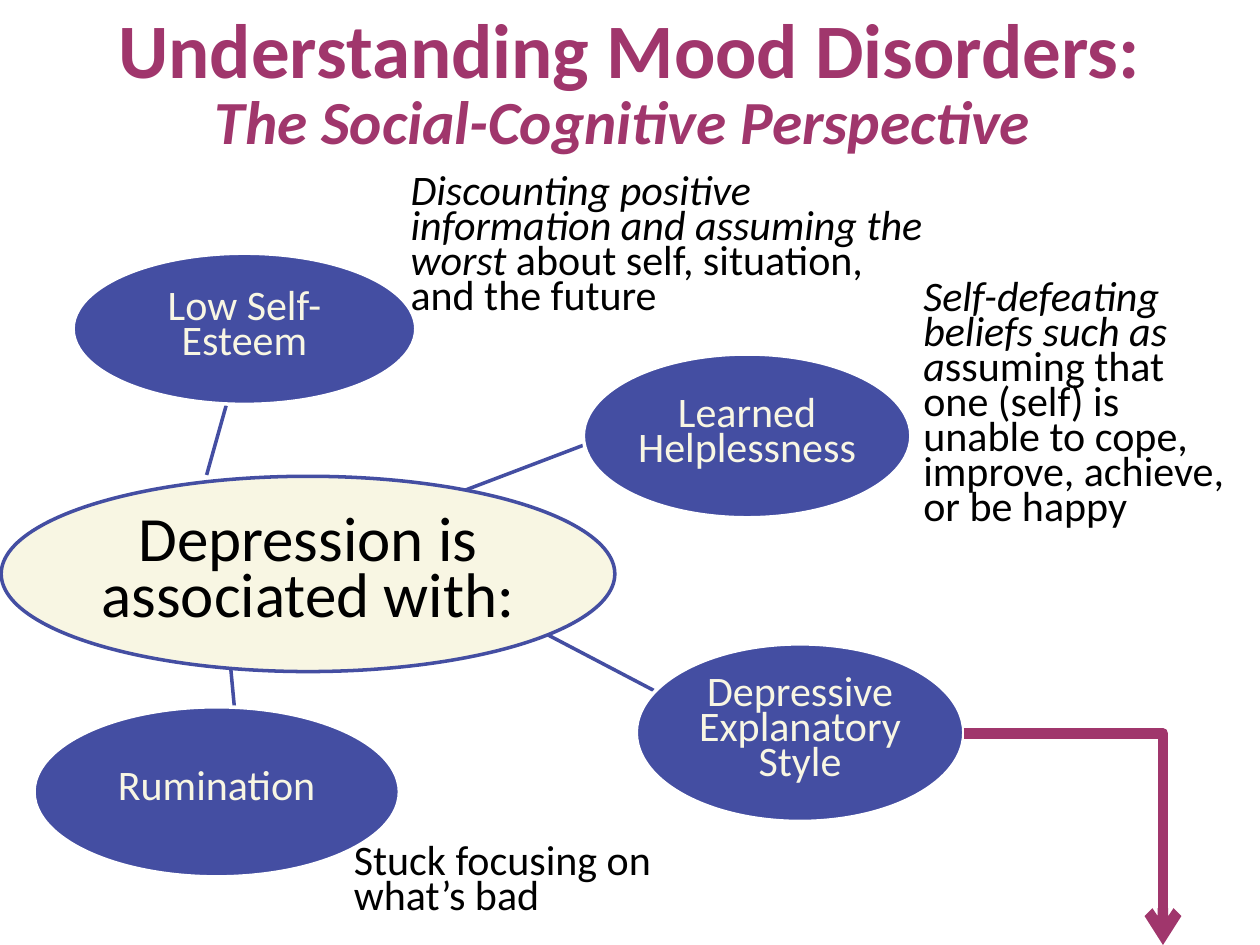
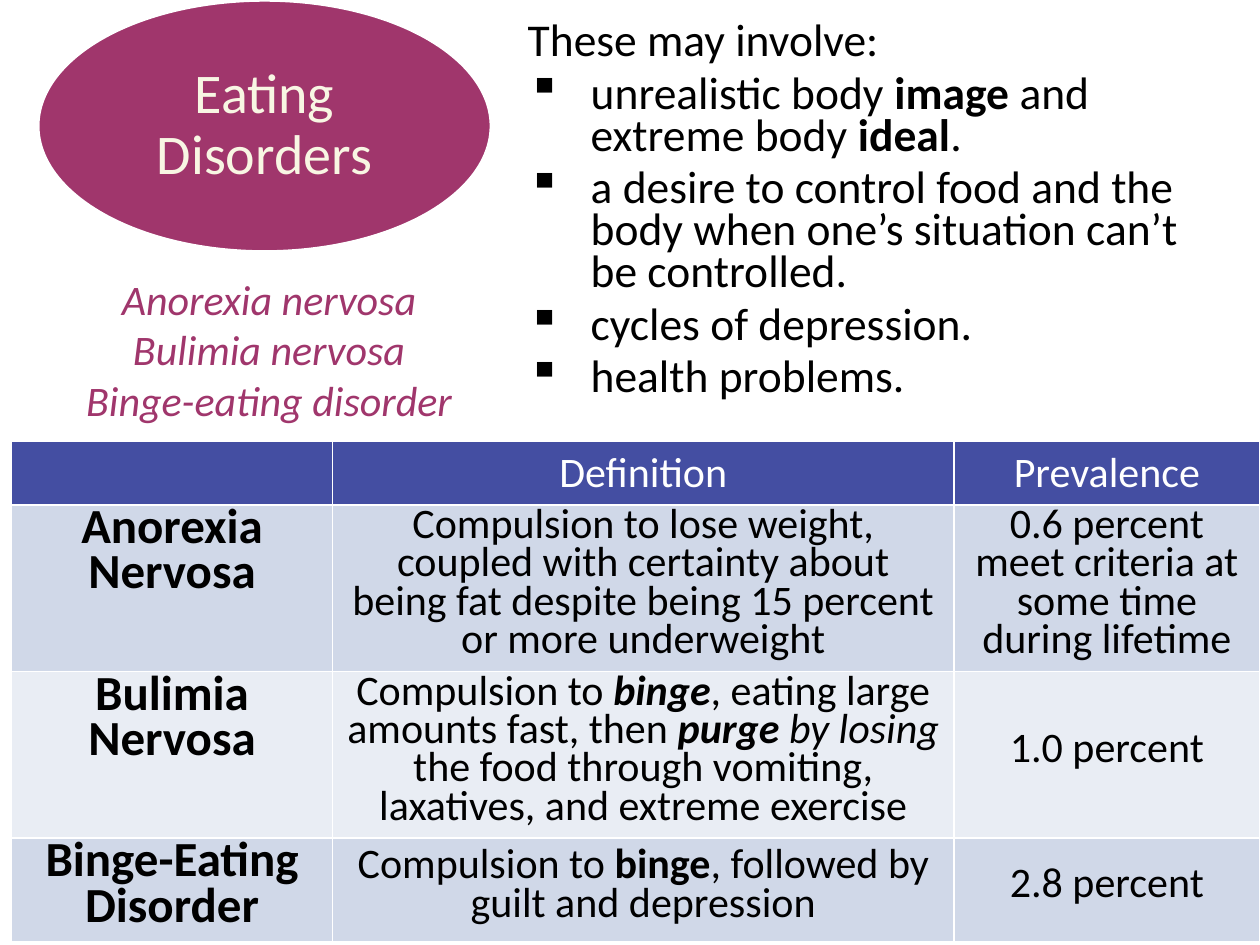
from dataclasses import dataclass
from typing import NamedTuple

from lxml import etree
from pptx import Presentation
from pptx import util as u
from pptx.dml.color import RGBColor
from pptx.enum import shapes, text
from pptx.oxml import ns

Inches, Pt = u.Inches, u.Pt
CENTER, LEFT = text.PP_ALIGN.CENTER, text.PP_ALIGN.LEFT
TOP, MIDDLE = text.MSO_ANCHOR.TOP, text.MSO_ANCHOR.MIDDLE


@dataclass(frozen=True)
class Theme:
    font: str = "Calibri"
    plum: str = "A0366C"
    blue: str = "444EA2"
    cream: str = "F8F6E3"
    white: str = "FFFFFF"
    black: str = "000000"
    bands: tuple = ("D0D8E8", "E9EDF4")
    title: int = 44
    subtitle: int = 35
    hub: int = 36
    topic: int = 32
    row_head: int = 28
    list: int = 26
    body: int = 24


THEME = Theme()


class Span(NamedTuple):
    text: str
    bold: bool = False
    italic: bool = False
    size: int = 0  # 0 means the size of the paragraph


class Area(NamedTuple):
    left: float
    top: float
    width: float
    height: float

    def lengths(self) -> list:
        return [Inches(value) for value in self]


@dataclass(frozen=True)
class Style:
    size: int = THEME.body
    color: str = THEME.black
    align: int = LEFT
    leading: object = None  # points as Pt, or a share of a line
    after: int = 0
    anchor: int = TOP
    inset: tuple = (0.1, 0.05)


@dataclass(frozen=True)
class Factor:
    label: str
    area: Area
    spoke: tuple  # start x, start y, end x, end y


class TableRow(NamedTuple):
    disorder: str
    definition: list
    prevalence: str


# Text styles
TITLE = Style(THEME.title, THEME.plum, CENTER, Pt(36), anchor=MIDDLE)
NOTE = Style(leading=Pt(20))
FACTOR = Style(THEME.body, THEME.cream, CENTER, Pt(20), anchor=MIDDLE, inset=(0, 0))
HUB = Style(THEME.hub, THEME.black, CENTER, Pt(32), anchor=MIDDLE, inset=(0, 0))
TOPIC = Style(THEME.topic, THEME.cream, CENTER, 0.9, anchor=MIDDLE, inset=(0.19, 0.19))
KINDS = Style(THEME.body, THEME.plum, CENTER)
SIGNS = Style(THEME.list, leading=Pt(24), after=6)
HEADER = Style(THEME.body, THEME.white, CENTER)
ROW_HEAD = Style(THEME.row_head, THEME.black, CENTER, Pt(26))
CELL = Style(THEME.body, THEME.black, CENTER, Pt(22), anchor=MIDDLE)

# Content of the mood disorders slide
FACTORS = [
    Factor("Depressive Explanatory Style", Area(5.05, 5.11, 2.6, 1.41), (4.35, 5.04, 5.19, 5.48)),
    Factor("Low Self-Esteem", Area(0.58, 2.01, 2.72, 1.2), (1.64, 3.77, 1.8, 3.2)),
    Factor("Learned Helplessness", Area(4.63, 2.81, 2.6, 1.3), (3.64, 3.91, 4.64, 3.53)),
    Factor("Rumination", Area(0.27, 5.61, 2.9, 1.35), (1.83, 5.29, 1.86, 5.61)),
]
NOTES = [
    (Area(3.16, 1.37, 4.35, 1.24),
     [Span("Discounting positive information and assuming the worst", italic=True),
      Span(" about self, situation, and the future")]),
    (Area(7.23, 2.21, 2.67, 2.06),
     [Span("Self-defeating beliefs such as a", italic=True),
      Span("ssuming that one (self) is unable to cope, improve, achieve, or be happy")]),
    (Area(2.71, 6.69, 3.22, 0.68), [Span("Stuck focusing on what’s bad")]),
]

# Content of the eating disorders slide
SIGN_ITEMS = [
    [Span("unrealistic body "), Span("image ", bold=True), Span("and extreme body "),
     Span("ideal", bold=True), Span(".")],
    [Span("a desire to control food and the body when one’s situation can’t be controlled.")],
    [Span("cycles of depression.")],
    [Span("health problems.")],
]
COLUMNS = (2.55, 4.93, 2.43)
ROW_HEIGHTS = (0.5, 1.32, 1.32, 0.82)
TABLE_ROWS = [
    TableRow("Anorexia Nervosa",
             [Span("Compulsion to lose weight, coupled with certainty about being fat "
                   "despite being 15 percent or more underweight")],
             "0.6 percent meet criteria at some time during lifetime"),
    TableRow("Bulimia Nervosa",
             [Span("Compulsion to "), Span("binge", bold=True, italic=True),
              Span(", eating large amounts fast, then "),
              Span("purge ", bold=True, italic=True), Span("by losing", italic=True),
              Span(" the food through vomiting, laxatives, and extreme exercise")],
             "1.0 percent"),
    TableRow("Binge-Eating Disorder",
             [Span("Compulsion to "), Span("binge", bold=True),
              Span(", followed by guilt and depression")],
             "2.8 percent"),
]


def rgb(color: str) -> RGBColor:
    return RGBColor.from_string(color)


def write(para, spans: list, style: Style) -> None:
    """Fill one paragraph; a newline in a span becomes a line break."""
    para.alignment = style.align
    para.line_spacing = style.leading
    para.space_after = Pt(style.after)
    for span in spans:
        for number, line in enumerate(span.text.split("\n")):
            if number:
                para.add_line_break()
            run = para.add_run()
            run.text = line
            font = run.font
            font.name, font.size = THEME.font, Pt(span.size or style.size)
            font.bold, font.italic = span.bold, span.italic
            font.color.rgb = rgb(style.color)


def set_frame(frame, style: Style) -> None:
    frame.word_wrap = True
    frame.vertical_anchor = style.anchor
    frame.margin_left = frame.margin_right = Inches(style.inset[0])
    frame.margin_top = frame.margin_bottom = Inches(style.inset[1])


def add_text(page, area: Area, spans: list, style: Style):
    frame = page.shapes.add_textbox(*area.lengths()).text_frame
    set_frame(frame, style)
    write(frame.paragraphs[0], spans, style)
    return frame


def add_oval(page, area: Area, label: str, style: Style, fill: str,
             outline: str = THEME.white) -> None:
    oval = page.shapes.add_shape(shapes.MSO_SHAPE.OVAL, *area.lengths())
    oval.shadow.inherit = False
    oval.fill.solid()
    oval.fill.fore_color.rgb = rgb(fill)
    oval.line.color.rgb = rgb(outline)
    oval.line.width = Pt(2)
    set_frame(oval.text_frame, style)
    write(oval.text_frame.paragraphs[0], [Span(label)], style)


def add_line(page, ends: tuple, color: str, width: float,
             kind: int = shapes.MSO_CONNECTOR.STRAIGHT):
    line = page.shapes.add_connector(kind, *[Inches(value) for value in ends])
    line.line.color.rgb = rgb(color)
    line.line.width = Pt(width)
    etree.SubElement(line._element.spPr, ns.qn("a:effectLst"))
    return line


def add_bent_arrow(page, ends: tuple, color: str, width: float) -> None:
    arrow = add_line(page, ends, color, width, shapes.MSO_CONNECTOR.ELBOW)
    arrow._element.spPr.find(ns.qn("a:prstGeom")).set("prst", "bentConnector2")
    etree.SubElement(arrow.line._get_or_add_ln(), ns.qn("a:tailEnd"), type="arrow")


def add_bullet(para, indent: float) -> None:
    props = para._p.get_or_add_pPr()
    props.set("marL", str(Inches(indent)))
    props.set("indent", str(-Inches(indent)))
    etree.SubElement(props, ns.qn("a:buChar"), char="▪")


def fill_cell(cell, spans: list, style: Style, fill: str) -> None:
    set_frame(cell.text_frame, style)
    cell.vertical_anchor = style.anchor
    write(cell.text_frame.paragraphs[0], spans, style)
    props = cell._tc.get_or_add_tcPr()
    for side in ("lnL", "lnR", "lnT", "lnB"):
        border = etree.SubElement(props, ns.qn(f"a:{side}"), w=str(Pt(1)))
        paint = etree.SubElement(border, ns.qn("a:solidFill"))
        etree.SubElement(paint, ns.qn("a:srgbClr"), val=THEME.white)
    cell.fill.solid()
    cell.fill.fore_color.rgb = rgb(fill)


def add_disorder_table(page) -> None:
    area = Area(0.09, 3.5, sum(COLUMNS), sum(ROW_HEIGHTS))
    table = page.shapes.add_table(len(ROW_HEIGHTS), len(COLUMNS), *area.lengths()).table
    for column, width in zip(table.columns, COLUMNS):
        column.width = Inches(width)
    for row, height in zip(table.rows, ROW_HEIGHTS):
        row.height = Inches(height)
    for column, heading in enumerate(("", "Definition", "Prevalence")):
        spans = [Span(heading)] if heading else []
        fill_cell(table.cell(0, column), spans, HEADER, THEME.blue)
    for number, row in enumerate(TABLE_ROWS):
        band = THEME.bands[number % 2]
        cells = (([Span(row.disorder, bold=True)], ROW_HEAD),
                 (row.definition, CELL), ([Span(row.prevalence)], CELL))
        for column, (spans, style) in enumerate(cells):
            fill_cell(table.cell(number + 1, column), spans, style, band)


def build_mood_page(page) -> None:
    # Factors with their spokes, then the hub on top
    for factor in FACTORS:
        add_line(page, factor.spoke, THEME.blue, 2)
        add_oval(page, factor.area, factor.label, FACTOR, THEME.blue)
    for area, spans in NOTES:
        add_text(page, area, spans, NOTE)
    add_oval(page, Area(0.01, 3.78, 4.87, 1.55), "Depression is associated with:",
             HUB, THEME.cream, THEME.blue)
    # Title and the arrow leading off the page
    add_text(page, Area(0.5, 0.12, 9, 1.25),
             [Span("Understanding Mood Disorders: ", bold=True),
              Span("The Social-Cognitive Perspective ", True, True, THEME.subtitle)], TITLE)
    add_bent_arrow(page, (7.65, 5.82, 9.23, 7.5), THEME.plum, 6)


def build_eating_page(page) -> None:
    add_disorder_table(page)
    # Signs
    frame = add_text(page, Area(4.09, 0.14, 5.76, 3.13), [Span("These may involve:")], SIGNS)
    for spans in SIGN_ITEMS:
        para = frame.add_paragraph()
        write(para, spans, SIGNS)
        add_bullet(para, 0.5)
    # Topic and its kinds
    add_oval(page, Area(0.3, 0, 3.6, 2), "Eating Disorders", TOPIC, THEME.plum)
    add_text(page, Area(0.18, 2.12, 3.91, 1.31),
             [Span("Anorexia nervosa\nBulimia nervosa\nBinge-eating disorder", italic=True)],
             KINDS)


def main() -> None:
    deck = Presentation()
    deck.slide_width, deck.slide_height = Inches(10), Inches(7.5)
    for build in (build_mood_page, build_eating_page):
        build(deck.slides.add_slide(deck.slide_layouts[6]))
    deck.save("out.pptx")


if __name__ == "__main__":
    main()
